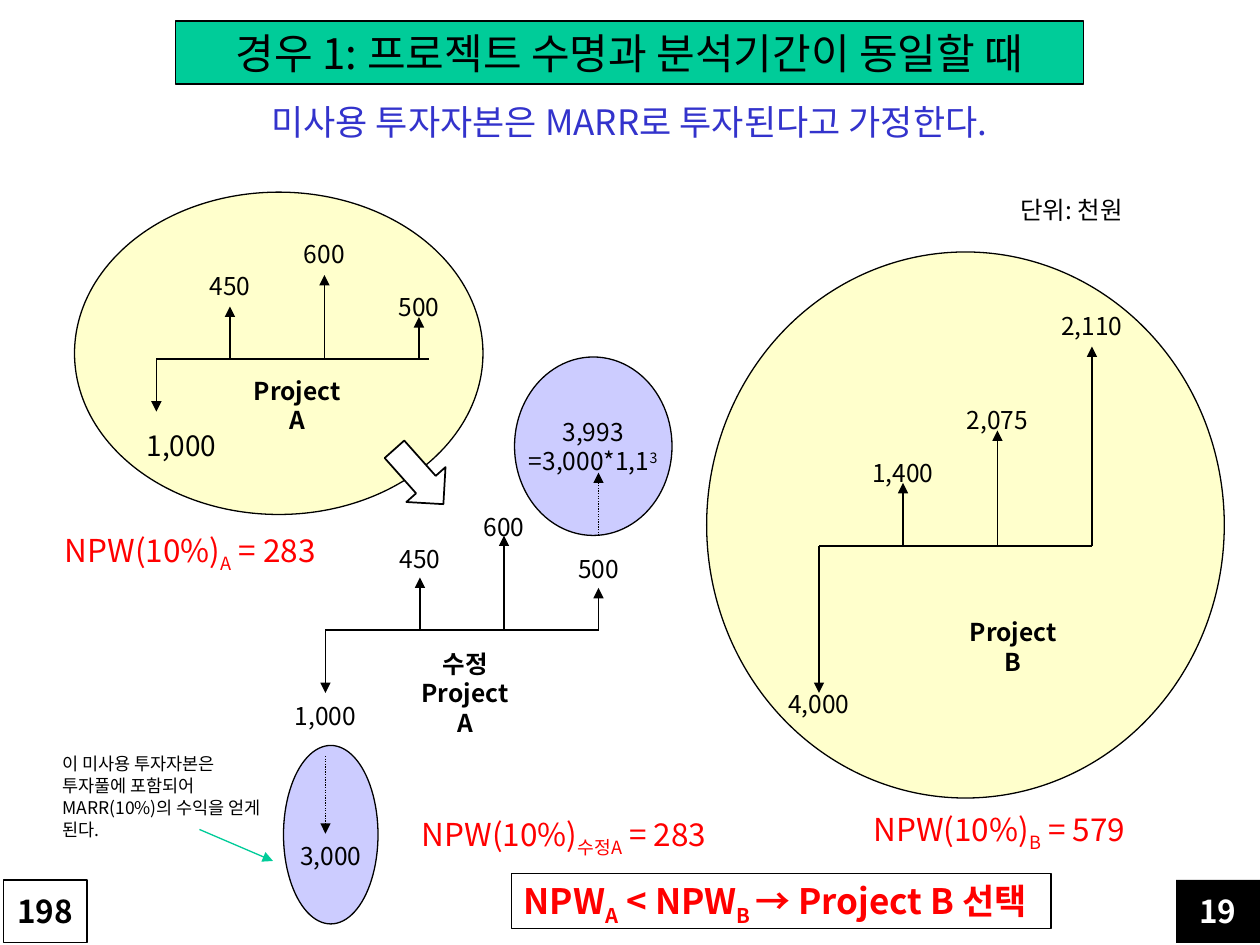
from dataclasses import dataclass

from lxml.etree import SubElement
from pptx import Presentation
from pptx.dml.color import RGBColor
from pptx.enum.dml import MSO_LINE
from pptx.enum.shapes import MSO_CONNECTOR, MSO_SHAPE
from pptx.enum.text import MSO_ANCHOR, MSO_AUTO_SIZE, PP_ALIGN
from pptx.oxml.ns import qn
from pptx.util import Inches, Pt

COLS, ROWS = 120, 90
CELL = Inches(1) / 12
SUB, SUPER = -25000, 30000


@dataclass(frozen=True)
class Theme:
    font: str = "Noto Sans CJK KR"
    black: str = "000000"
    white: str = "FFFFFF"
    red: str = "FF0000"
    blue: str = "3333CC"
    green: str = "00CC99"
    cream: str = "FFFFCC"
    lilac: str = "CCCCFF"
    title: int = 24
    lead: int = 20
    result: int = 18
    amount: int = 16
    label: int = 14
    note: int = 10


@dataclass(frozen=True)
class Flow:
    """One cash flow: column on the axis, signed rise, and its label."""
    col: float
    rise: float
    text: str
    gap: float
    shift: float = 0
    size: int = Theme.label


T = Theme()


def grid(*cells):
    return [round(c * CELL) for c in cells]


def rgb(color):
    return RGBColor.from_string(color)


def write(sp, paragraphs, size=T.label, color=T.black, bold=False,
          align=PP_ALIGN.CENTER, wrap=False, anchor=MSO_ANCHOR.TOP, spacing=None):
    """Each paragraph is a string or a list of (text, baseline) runs."""
    tf = sp.text_frame
    tf.word_wrap, tf.auto_size, tf.vertical_anchor = wrap, MSO_AUTO_SIZE.NONE, anchor
    for i, runs in enumerate(paragraphs):
        p = tf.add_paragraph() if i else tf.paragraphs[0]
        p.alignment = align
        if spacing:
            p.line_spacing = spacing
        f = p.font
        f.name, f.size, f.bold = T.font, Pt(size), bold
        f.color.rgb = rgb(color)
        props = p._p.get_or_add_pPr().get_or_add_defRPr()
        SubElement(props, qn("a:ea")).set("typeface", T.font)
        for text, baseline in [(runs, 0)] if isinstance(runs, str) else runs:
            r = p.add_run()
            r.text = text
            if baseline:
                r._r.get_or_add_rPr().set("baseline", str(baseline))


def text_box(s, box, *paragraphs, **style):
    sp = s.shapes.add_textbox(*grid(*box))
    write(sp, paragraphs, **style)
    return sp


def outline(sp, width=0.75):
    sp.line.color.rgb = rgb(T.black)
    sp.line.width = Pt(width)


def shape(s, kind, box, fill, line=0.75):
    sp = s.shapes.add_shape(kind, *grid(*box))
    sp.shadow.inherit = False
    sp.fill.solid()
    sp.fill.fore_color.rgb = rgb(fill)
    if line:
        outline(sp, line)
    else:
        sp.line.fill.background()
    return sp


def line(s, x1, y1, x2, y2, color=T.black, arrow=True, dotted=False):
    c = s.shapes.add_connector(MSO_CONNECTOR.STRAIGHT, *grid(x1, y1, x2, y2))
    c.line.color.rgb = rgb(color)
    c.line.width = Pt(0.75)
    if dotted:
        c.line.dash_style = MSO_LINE.ROUND_DOT
    if arrow:
        SubElement(c.line._get_or_add_ln(), qn("a:tailEnd")).set("type", "triangle")
    SubElement(c._element.spPr, qn("a:effectLst"))


def cash_flow(s, box, flows, name, name_at):
    """Axis from the box's left edge along its baseline, with arrows and labels."""
    x, y, w = box
    line(s, x, y, x + w, y, arrow=False)
    for f in flows:
        at, tip = x + f.col, y - f.rise
        line(s, at, y, at, tip)
        top = tip - f.gap if f.rise > 0 else tip + f.gap
        text_box(s, (at + f.shift - 4.2, top, 8.4, 4), f.text, size=f.size)
    text_box(s, (x + name_at[0], y + name_at[1], 12.6, 4 * len(name)),
             *name, bold=True, wrap=True)


def heading(s, box):
    title = s.shapes.title
    title.left, title.top, title.width, title.height = grid(*box)
    title.fill.solid()
    title.fill.fore_color.rgb = rgb(T.green)
    outline(title)
    write(title, ["경우 1: 프로젝트 수명과 분석기간이 동일할 때"],
          size=T.title, anchor=MSO_ANCHOR.MIDDLE)
    x, y, w, h = box
    text_box(s, (x, y + h + 1, w, 5.2), "미사용 투자자본은 MARR로 투자된다고 가정한다.",
             size=T.lead, color=T.blue)


def npw(s, box, project, value, wrap=False):
    text_box(s, box, [("NPW(10%)", 0), (project, SUB), (f" = {value}", 0)],
             size=T.result, color=T.red, align=PP_ALIGN.LEFT, wrap=wrap)


def project_a(s, box):
    x, y, w, h = box
    shape(s, MSO_SHAPE.OVAL, box, T.cream)
    cash_flow(s, (x + 7.8, y + 15.9, 26),
              [Flow(0, -5, "1,000", 1, 2.4, T.amount), Flow(7, 5, "450", 4),
               Flow(16, 8, "600", 4), Flow(25, 4, "500", 3)], ["Project A"], (7.1, 1))
    npw(s, (x - 2.1, y + h + 1, 26.6, 4.8), "A", 283)


def project_b(s, box):
    x, y, w, h = box
    shape(s, MSO_SHAPE.OVAL, box, T.cream)
    cash_flow(s, (x + 10.7, y + 28, 26),
              [Flow(0, -14, "4,000", -1), Flow(8, 6, "1,400", 3),
               Flow(17, 11, "2,075", 3), Flow(26, 19, "2,110", 4)], ["Project B"], (12.2, 6.2))
    npw(s, (x + 14.7, y + h + 0.6, 26.6, 4.8), "B", 579)


def modified_a(s, box):
    """Project A with the unused capital invested and paid back."""
    x, y, w = box
    cash_flow(s, box,
              [Flow(0, -6, "1,000", 0.2), Flow(9, 5, "450", 3.8),
               Flow(17, 9, "600", 2.8), Flow(26, 4, "500", 3.8)],
              ["수정", "Project A"], (7, 1.2))
    unused = shape(s, MSO_SHAPE.OVAL, (x - 4, y + 11, 9, 17), T.lilac)
    write(unused, ["3,000"], anchor=MSO_ANCHOR.MIDDLE)
    unused.text_frame.margin_top = grid(4.6)[0]
    returned = shape(s, MSO_SHAPE.OVAL, (x + 18, y - 26, 15, 17), T.lilac)
    write(returned, ["3,993", [("=3,000*1,1", 0), ("3", SUPER)]], anchor=MSO_ANCHOR.MIDDLE)
    line(s, x, y + 12, x, y + 19.4, dotted=True)
    line(s, x + w, y - 9, x + w, y - 15, dotted=True)
    npw(s, (x + 8, y + 17, 30.6, 9), "수정A", 283, wrap=True)


def note(s, box):
    x, y, w, h = box
    text_box(s, box, "이 미사용 투자자본은", "투자풀에 포함되어", "MARR(10%)의 수익을 얻게 된다.",
             size=T.note, align=PP_ALIGN.LEFT, wrap=True, spacing=1.05)
    line(s, x + 14.2, y + 8, x + 21.2, y + 11, color=T.green)


def conclusion(s, box):
    sp = text_box(s, box, [("NPW", 0), ("A", SUB), (" < NPW", 0), ("B ", SUB),
                           ("→ Project B 선택", 0)],
                  size=T.lead, color=T.red, bold=True, align=PP_ALIGN.LEFT)
    outline(sp)


def page_number(s, left, text, fill, color, border):
    sp = shape(s, MSO_SHAPE.RECTANGLE, (left, ROWS - 6.2, 8, 6), fill, border)
    write(sp, [text], size=T.result, color=color, bold=True, wrap=True,
          anchor=MSO_ANCHOR.MIDDLE)


def main():
    prs = Presentation()
    prs.slide_width, prs.slide_height = grid(COLS, ROWS)
    s = prs.slides.add_slide(prs.slide_layouts[5])
    heading(s, (16.7, 2, 86.5, 6))
    project_b(s, (67.3, 24, 49.3, 52))
    project_a(s, (7.1, 18.3, 38.9, 30.7))
    modified_a(s, (31, 60, 26))
    note(s, (4.8, 71, 21.6, 9.7))
    text_box(s, (96, 18, 18, 4), "단위: 천원", align=PP_ALIGN.LEFT, wrap=True)
    arrow = shape(s, MSO_SHAPE.DOWN_ARROW, (37.4, 41.9, 5, 7), T.white, 1)
    arrow.rotation = 318.3
    conclusion(s, (48.7, 83.2, 51.4, 5.2))
    page_number(s, 0.3, "198", T.white, T.black, 0.75)
    page_number(s, COLS - 8, "19", T.black, T.white, 0)
    prs.save("out.pptx")


if __name__ == "__main__":
    main()
